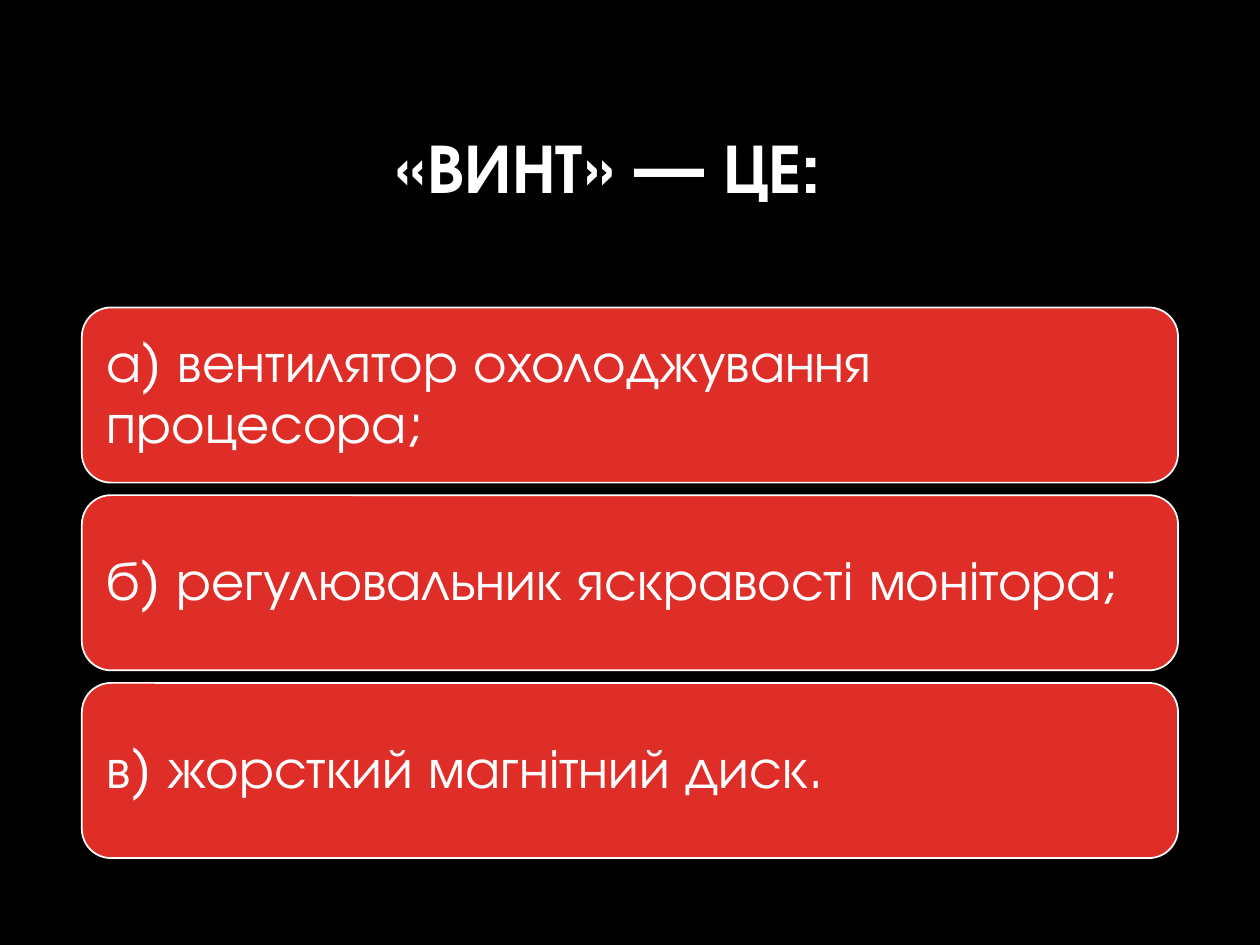
from dataclasses import dataclass

import pptx
import pptx.dml.color
import pptx.enum.shapes
import pptx.enum.text
import pptx.util

Inches = pptx.util.Inches


@dataclass(frozen=True)
class Theme:
    background: str = "000000"
    card: str = "DF2E28"
    text: str = "FFFFFF"
    font: str = "TeX Gyre Adventor"
    title_size: int = 40
    answer_size: int = 32
    line_spacing: float = 0.9


@dataclass(frozen=True)
class Box:
    left: float
    top: float
    width: float
    height: float

    def rows(self, count, gap):
        height = (self.height - gap * (count - 1)) / count
        return [Box(self.left, self.top + index * (height + gap), self.width, height)
                for index in range(count)]

    def place(self, shape):
        shape.left, shape.top = Inches(self.left), Inches(self.top)
        shape.width, shape.height = Inches(self.width), Inches(self.height)


THEME = Theme()
SLIDE_WIDTH, SLIDE_HEIGHT = 10, 7.5
TITLE_BOX = Box(0.28 * SLIDE_WIDTH, 0.128 * SLIDE_HEIGHT, 3.98, 1.41)
ANSWERS_BOX = Box(0.065 * SLIDE_WIDTH, 2.44, 0.87 * SLIDE_WIDTH, 4.37)
ANSWER_GAP = 0.1
ANSWERS = [
    "а) вентилятор охолоджування процесора;",
    "б) регулювальник яскравості монітора;",
    "в) жорсткий магнітний диск.",
]


def color(value):
    return pptx.dml.color.RGBColor.from_string(value)


def write_text(shape, text, size, alignment, margins, bold=False):
    frame = shape.text_frame
    frame.word_wrap = True
    frame.auto_size = pptx.enum.text.MSO_AUTO_SIZE.NONE
    frame.vertical_anchor = pptx.enum.text.MSO_ANCHOR.MIDDLE
    (frame.margin_left, frame.margin_top,
     frame.margin_right, frame.margin_bottom) = map(Inches, margins)
    paragraph = frame.paragraphs[0]
    paragraph.alignment = alignment
    paragraph.line_spacing = THEME.line_spacing
    paragraph.space_before = pptx.util.Pt(0)
    run = paragraph.add_run()
    run.text = text
    run.font.name = THEME.font
    run.font.size = pptx.util.Pt(size)
    run.font.bold = bold
    run.font.color.rgb = color(THEME.text)


def add_title(slide, box):
    title = slide.shapes.title
    box.place(title)
    # The deep bottom margin lifts the line above the middle of its box
    write_text(title, "«ВИНТ» — ЦЕ:", THEME.title_size,
               pptx.enum.text.PP_ALIGN.RIGHT, (0.1, 0.05, 0.26, 0.67), bold=True)


def add_answers(slide, box):
    for text, row in zip(ANSWERS, box.rows(len(ANSWERS), ANSWER_GAP)):
        card = slide.shapes.add_shape(
            pptx.enum.shapes.MSO_SHAPE.ROUNDED_RECTANGLE, 0, 0, 0, 0)
        row.place(card)
        card.shadow.inherit = False
        card.fill.solid()
        card.fill.fore_color.rgb = color(THEME.card)
        card.line.color.rgb = color(THEME.text)
        card.line.width = pptx.util.Pt(1)
        write_text(card, text, THEME.answer_size,
                   pptx.enum.text.PP_ALIGN.LEFT, (0.13, 0.13, 0.13, 0.13))


def main():
    presentation = pptx.Presentation()
    presentation.slide_width = Inches(SLIDE_WIDTH)
    presentation.slide_height = Inches(SLIDE_HEIGHT)
    slide = presentation.slides.add_slide(presentation.slide_layouts[5])

    # Black background
    slide.background.fill.solid()
    slide.background.fill.fore_color.rgb = color(THEME.background)

    # Question and its three answers
    add_title(slide, TITLE_BOX)
    add_answers(slide, ANSWERS_BOX)
    presentation.save("out.pptx")


if __name__ == "__main__":
    main()
